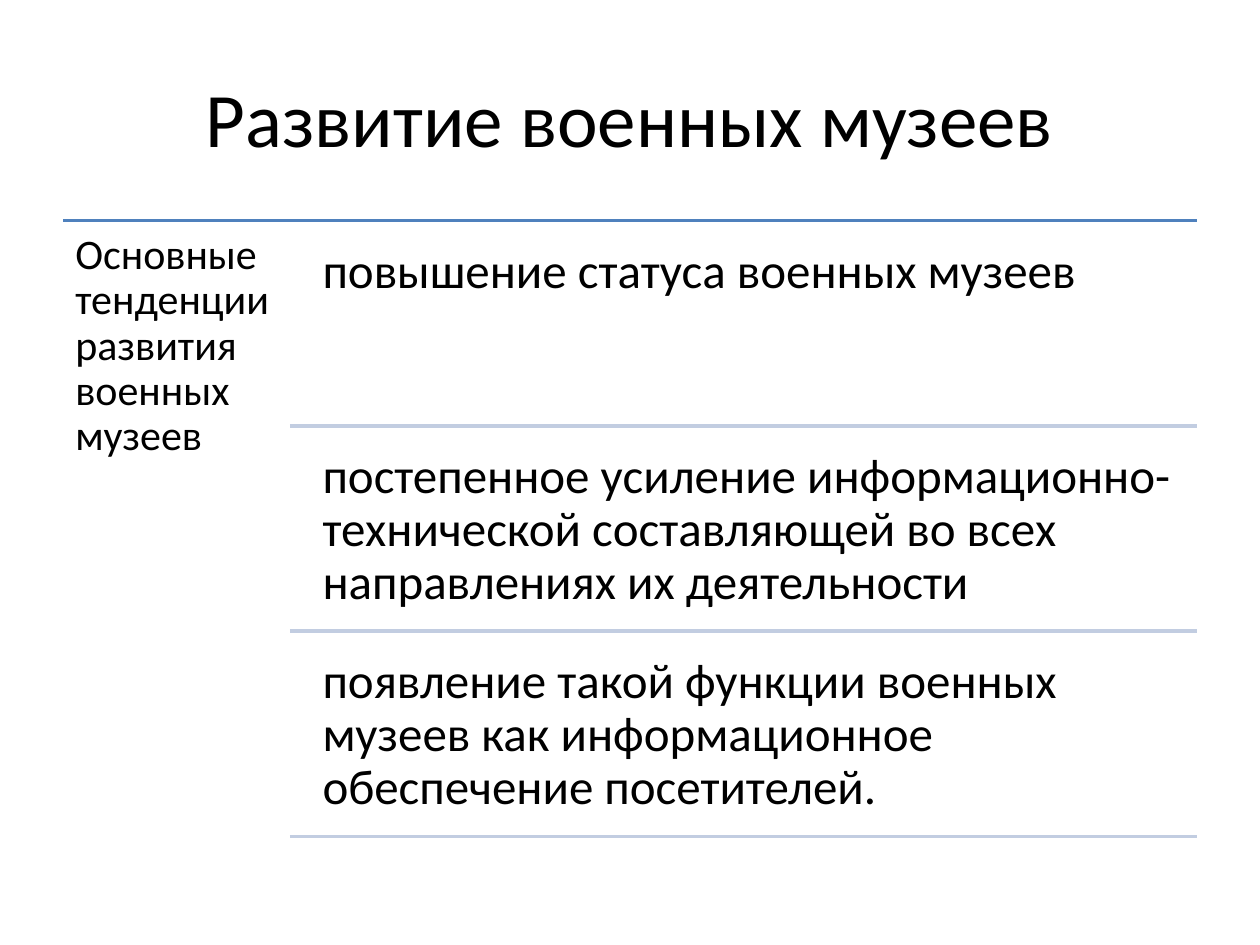
from pptx import Presentation
from pptx.dml.color import RGBColor
from pptx.enum.shapes import MSO_CONNECTOR
from pptx.enum.text import MSO_ANCHOR, MSO_AUTO_SIZE, PP_ALIGN
from pptx.oxml.ns import qn
from pptx.util import Inches, Pt
from lxml.etree import SubElement

BLACK = RGBColor(0x00, 0x00, 0x00)
BLUE = RGBColor(0x4F, 0x81, 0xBD)
PALE_BLUE = RGBColor(0xC2, 0xCD, 0xE1)

LEFT, RIGHT, TOP = 0.5, 9.5, 1.75
TREND_RULE_LEFT, TREND_TEXT_LEFT = 2.3, 2.44
TREND_HEIGHT, TREND_GAP = 1.55, 0.08

TRENDS = [
    "повышение статуса военных музеев",
    "постепенное усиление информационно-технической составляющей "
    "во всех направлениях их деятельности",
    "появление такой функции военных музеев как информационное "
    "обеспечение посетителей.",
]


def write_text(box, text, size, frame_format, paragraph_format):
    """Fill a box with one formatted paragraph."""
    frame = box.text_frame
    for name, value in frame_format.items():
        setattr(frame, name, value)
    paragraph = frame.paragraphs[0]
    for name, value in paragraph_format.items():
        setattr(paragraph, name, value)
    span = paragraph.add_run()
    span.text = text
    font_format = {"name": "Calibri", "size": Pt(size)}
    for name, value in font_format.items():
        setattr(span.font, name, value)
    span.font.color.rgb = BLACK


def add_title(page, text):
    title = page.shapes.title
    place = {"left": 0.5, "top": 0.3, "width": 9, "height": 1.25}
    for name, value in place.items():
        setattr(title, name, Inches(value))
    write_text(title, text, 44, {"vertical_anchor": MSO_ANCHOR.MIDDLE},
               {"alignment": PP_ALIGN.CENTER})


def add_text(page, text, size, left, top, width, height, inset):
    box = page.shapes.add_textbox(*map(Inches, (left, top, width, height)))
    frame_format = {
        f"margin_{side}": Inches(inset)
        for side in ("left", "top", "right", "bottom")
    }
    frame_format.update(word_wrap=True, auto_size=MSO_AUTO_SIZE.NONE,
                        vertical_anchor=MSO_ANCHOR.TOP)
    write_text(box, text, size, frame_format,
               {"alignment": PP_ALIGN.LEFT, "line_spacing": 0.9})


def add_rule(page, left, top, color):
    rule = page.shapes.add_connector(
        MSO_CONNECTOR.STRAIGHT, *map(Inches, (left, top, RIGHT, top)))
    rule.line.color.rgb = color
    rule.line.width = Pt(2)
    # An empty effect list keeps the theme shadow off
    SubElement(rule._element.spPr, qn("a:effectLst"))


def main():
    deck = Presentation()
    deck.slide_width, deck.slide_height = Inches(10), Inches(7.5)
    page = deck.slides.add_slide(deck.slide_layouts[5])
    add_title(page, "Развитие военных музеев")

    # Heading column under the main rule
    add_rule(page, LEFT, TOP, BLUE)
    add_text(page, "Основные тенденции развития военных музеев", 24,
             LEFT, TOP, 1.8, 4.95, 0.1)

    # Trends, each closed by a pale rule
    for index, trend in enumerate(TRENDS):
        top = TOP + TREND_GAP + index * (TREND_HEIGHT + TREND_GAP)
        add_text(page, trend, 28, TREND_TEXT_LEFT, top, 7.07, TREND_HEIGHT, 0.12)
        add_rule(page, TREND_RULE_LEFT, top + TREND_HEIGHT, PALE_BLUE)

    deck.save("out.pptx")


if __name__ == "__main__":
    main()
